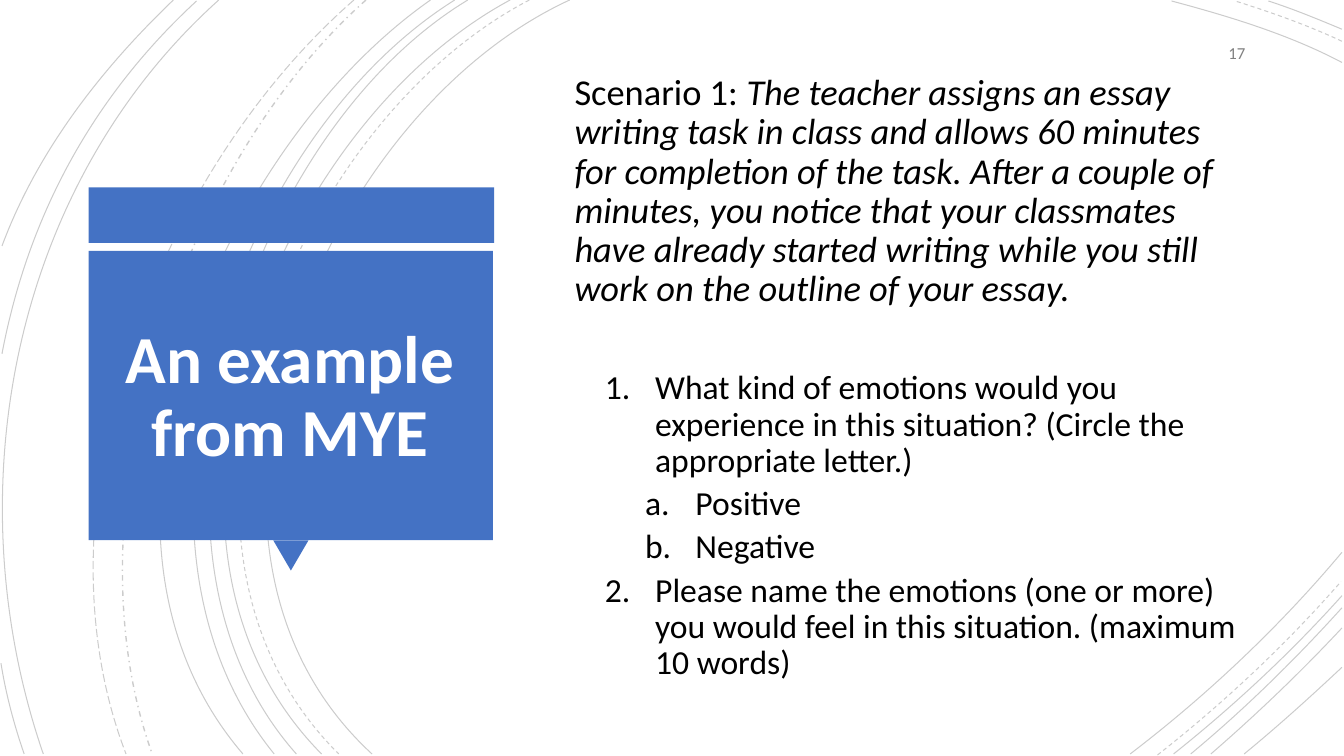
from dataclasses import dataclass

from lxml.etree import SubElement
from pptx import Presentation
from pptx.dml.color import RGBColor
from pptx.enum.dml import MSO_LINE
from pptx.enum.shapes import MSO_SHAPE
from pptx.enum.text import MSO_ANCHOR, PP_ALIGN
from pptx.oxml.ns import qn
from pptx.util import Inches, Pt


@dataclass
class Theme:
    font: str = "Calibri"
    black: RGBColor = RGBColor(0, 0, 0)
    white: RGBColor = RGBColor(255, 255, 255)
    blue: RGBColor = RGBColor(0x44, 0x72, 0xC4)
    gray: RGBColor = RGBColor(0x80, 0x80, 0x80)
    title: int = 48
    story: int = 26
    task: int = 24
    small: int = 12
    leading: float = 0.9
    alpha: int = 20


class Page:
    def __init__(self, slide, theme):
        self.slide = slide
        self.theme = theme

    def group(self):
        return self.slide.shapes.add_group_shape().shapes

    def arc(self, home, points, dash=MSO_LINE.SOLID, width=0.75):
        """Draw one cubic curve: start, two control points, end."""
        start, *rest = [(Inches(x), Inches(y)) for x, y in points]
        form = home.build_freeform(*start)
        form.add_line_segments(rest, close=False)
        shape = form.convert_to_shape()
        shape.shadow.inherit = False
        shape.fill.background()
        shape.line.color.rgb = self.theme.black
        shape.line.width = Pt(width)
        shape.line.dash_style = dash
        tint = shape.line._get_or_add_ln().find(".//" + qn("a:srgbClr"))
        SubElement(tint, qn("a:alpha"), val=str(self.theme.alpha * 1000))
        # Turn the three straight segments into one curve
        track = shape._element.find(".//" + qn("a:path"))
        curve = SubElement(track, qn("a:cubicBezTo"))
        for seg in track.findall(qn("a:lnTo")):
            curve.append(seg[0])
            track.remove(seg)

    def block(self, home, kind, box, turn=0):
        shape = home.add_shape(kind, *map(Inches, box))
        shape.rotation = turn
        shape.shadow.inherit = False
        shape.fill.solid()
        shape.fill.fore_color.rgb = self.theme.blue
        shape.line.fill.background()

    def frame(self, box, text):
        frame = self.slide.shapes.add_textbox(*map(Inches, box)).text_frame
        frame.word_wrap = True
        frame.vertical_anchor = MSO_ANCHOR.MIDDLE
        frame.text = text
        return frame

    def style(self, para, size, color, align=PP_ALIGN.LEFT, before=0,
              bold=False):
        para.alignment = align
        para.line_spacing = self.theme.leading
        para.space_before = Pt(before)
        for run in para.runs:
            run.font.name = self.theme.font
            run.font.size = Pt(size)
            run.font.color.rgb = color
            run.font.bold = bold

    def number(self, para, level, scheme):
        """Give a list item its level, hanging indent and numbering."""
        para.level = level
        props = para._p.get_or_add_pPr()
        props.set("marL", str(Inches(0.4 + 0.4 * level)))
        props.set("indent", str(Inches(-0.5)))
        SubElement(props, qn("a:buFont"), typeface="+mj-lt")
        SubElement(props, qn("a:buAutoNum"), type=scheme)


DASH, LONG, MIX = MSO_LINE.DASH, MSO_LINE.LONG_DASH, MSO_LINE.DASH_DOT
ARCS = [
    # Large arcs on the left
    ([(5.65, 0), (3.15, 1.15), (1.43, 5.4), (3.69, 7.48)],),
    ([(5.25, 0), (2.85, 1.25), (1.23, 5.37), (3.36, 7.48)], DASH),
    ([(5.06, 0), (2.7, 1.27), (1.1, 5.37), (3.19, 7.48)],),
    ([(4.64, 0), (2.44, 1.33), (1.1, 5.41), (2.94, 7.48)],),
    ([(4.51, 0), (2.31, 1.38), (0.97, 5.33), (2.72, 7.48)],),
    ([(4.27, 0), (2.17, 1.47), (0.53, 5.29), (2.41, 7.48)],),
    ([(3.63, 0), (1.76, 1.66), (0.65, 5.09), (1.51, 7.48)], MIX, 1),
    ([(3.51, 0), (1.57, 1.69), (0.29, 4.99), (1.25, 7.48)], LONG),
    ([(2.17, 0), (0.11, 1.85), (-0.46, 4.9), (0.43, 7.48)],),
    ([(1.95, 0.01), (0.92, 0.96), (0.28, 2.14), (0.02, 3.51)],),
    ([(0.01, 6.58), (0.06, 6.89), (0.14, 7.19), (0.24, 7.48)],),
    ([(1.72, 0), (1, 0.69), (0.37, 1.5), (0.02, 2.44)],),
    # Top right corner
    ([(13.31, 0.62), (12.78, 0.34), (12.18, 0.16), (11.62, 0.01)],),
    ([(13.31, 0.41), (12.97, 0.25), (12.6, 0.12), (12.25, 0.01)], DASH),
    ([(13.31, 0.29), (13.07, 0.19), (12.83, 0.09), (12.58, 0.01)],),
    # Bottom right corner
    ([(11.21, 7.48), (11.97, 6.9), (12.69, 6.22), (13.31, 5.48)],),
    ([(11.48, 7.49), (12.13, 6.98), (12.75, 6.4), (13.3, 5.77)], DASH),
    ([(11.64, 7.48), (12.23, 7.01), (12.8, 6.48), (13.31, 5.91)],),
    ([(11.81, 7.48), (12.34, 7.04), (12.84, 6.55), (13.31, 6.03)],),
    ([(12.01, 7.48), (12.46, 7.09), (12.9, 6.67), (13.31, 6.23)],),
    ([(12.34, 7.48), (12.67, 7.21), (12.99, 6.92), (13.31, 6.62)],),
]

STORY = (
    "The teacher assigns an essay writing task in class and allows 60 minutes "
    "for completion of the task. After a couple of minutes, you notice that "
    "your classmates have already started writing while you still work on the "
    "outline of your essay."
)

# Text, level, numbering, space before (the first item opens a new part)
TASKS = [
    ("What kind of emotions would you experience in this situation? "
     "(Circle the appropriate letter.)", 1, "arabicPeriod", 43.5),
    ("Positive", 2, "alphaLcPeriod", 5),
    ("Negative", 2, "alphaLcPeriod", 5),
    ("Please name the emotions (one or more) you would feel in this "
     "situation. (maximum 10 words)", 1, "arabicPeriod", 5),
]


def main():
    deck = Presentation()
    deck.slide_width, deck.slide_height = Inches(13.33), Inches(7.5)
    theme = Theme()
    page = Page(deck.slides.add_slide(deck.slide_layouts[6]), theme)

    # Background arcs
    arcs = page.group()
    for arc in ARCS:
        page.arc(arcs, *arc)

    # Title panel with pointer
    panel = page.group()
    page.block(panel, MSO_SHAPE.RECTANGLE, (0.88, 1.86, 4.02, 0.55))
    page.block(panel, MSO_SHAPE.ISOSCELES_TRIANGLE,
               (2.71, 5.36, 0.35, 0.3), 180)
    page.block(panel, MSO_SHAPE.RECTANGLE, (0.88, 2.49, 4.01, 2.87))
    title = page.frame((0.99, 2.64, 3.77, 2.62), "An example from MYE")
    page.style(title.paragraphs[0], theme.title, theme.white,
               PP_ALIGN.CENTER, bold=True)

    # Slide number
    num = page.frame((11.45, 0.35, 1, 0.35), "17").paragraphs[0]
    page.style(num, theme.small, theme.gray, PP_ALIGN.RIGHT)
    num.line_spacing = 1.0
    num.space_after = Pt(6)

    # Scenario
    body = page.frame((5.6, 0.88, 6.87, 5.74), "Scenario 1: ")
    lead = body.paragraphs[0]
    story = lead.add_run()
    story.text = STORY
    story.font.italic = True
    page.style(lead, theme.story, theme.black, before=10)

    # Numbered questions
    for text, level, scheme, before in TASKS:
        para = body.add_paragraph()
        para.text = text
        page.style(para, theme.task, theme.black, before=before)
        page.number(para, level, scheme)

    deck.save("out.pptx")


if __name__ == "__main__":
    main()
